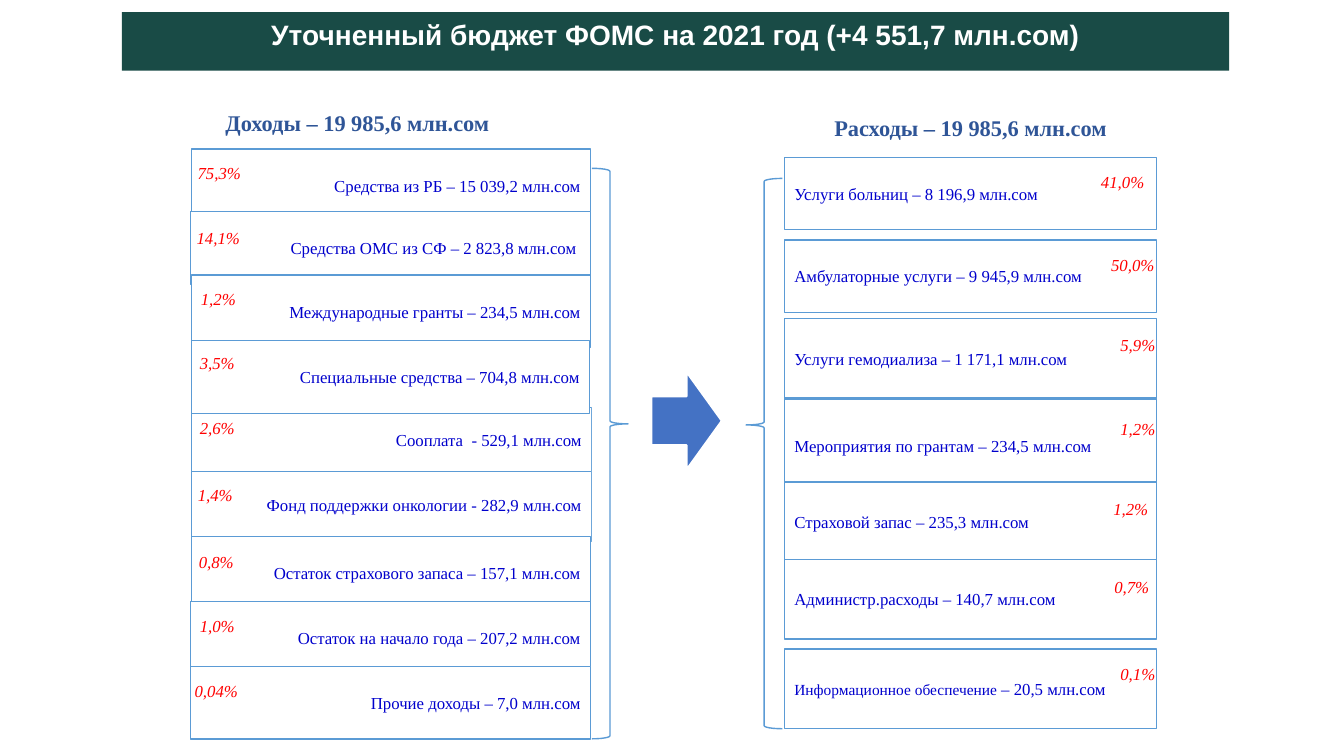
import pptx
import pptx.util
import pptx.dml.color
import pptx.enum.shapes
import pptx.enum.text

PX = 9144  # 100 px to the inch
KIND = pptx.enum.shapes.MSO_SHAPE
ALIGN = pptx.enum.text.PP_ALIGN
ANCHOR = pptx.enum.text.MSO_ANCHOR
SERIF = "Times New Roman"
EDGE, INK, RED, WHITE = "5B9BD5", "0000CC", "FF0000", "FFFFFF"

# Rows: left, top, width, height, label, share, share left, share top
# Positions are relative to the panel
INCOME = [
    (1, 45, 396, 72, "Средства из РБ – 15 039,2 млн.сом", "75,3%", -4, 54),
    (0, 107, 397, 72, "Средства ОМС из СФ – 2 823,8 млн.сом ", "14,1%", -5, 118),
    (1, 170, 396, 72, "Международные гранты – 234,5 млн.сом", "1,2%", -5, 179),
    (1, 362, 397, 72, "Фонд поддержки онкологии - 282,9 млн.сом", "1,4%", -8, 373),
    (1, 301, 397, 64, "Сооплата  - 529,1 млн.сом", "2,6%", -6, 307),
    (1, 235, 395, 72, "Специальные средства – 704,8 млн.сом", "3,5%", -6, 242),
    (1, 429, 396, 72, "Остаток страхового запаса – 157,1 млн.сом", "0,8%", -7, 439),
    (0, 494, 397, 72, "Остаток на начало года – 207,2 млн.сом", "1,0%", -6, 503),
    (0, 558, 397, 72, "Прочие доходы – 7,0 млн.сом", "0,04%", -7, 567),
]
SPEND = [
    (0, 48, 369, 72, "Услуги больниц – 8 196,9 млн.сом", "41,0%", 303, 57),
    (0, 130, 369, 72, "Амбулаторные услуги – 9 945,9 млн.сом", "50,0%", 313, 140),
    (0, 208, 369, 79, "Услуги гемодиализа – 1 171,1 млн.сом", "5,9%", 318, 219),
    (0, 288, 369, 92, "Мероприятия по грантам – 234,5 млн.сом", "1,2%", 318, 303),
    (0, 370, 369, 79, "Страховой запас – 235,3 млн.сом", "1,2%", 311, 382),
    (0, 447, 369, 79, "Администр.расходы – 140,7 млн.сом", "0,7%", 312, 459),
    (0, 536, 369, 79, [("Информационное обеспечение ", 11), ("– 20,5 млн.сом", 12)],
     "0,1%", 318, 546),
]


def color(code):
    return pptx.dml.color.RGBColor.from_string(code)


def scale(box):
    return [pptx.util.Emu(n * PX) for n in box]


def write(shape, runs, hue, align, anchor=ANCHOR.TOP, face=SERIF, bold=False, slant=False):
    frame = shape.text_frame
    frame.word_wrap = True
    frame.vertical_anchor = anchor
    para = frame.paragraphs[0]
    para.alignment = align
    for text, size in runs:
        run = para.add_run()
        run.text = text
        font = run.font
        font.name, font.size = face, pptx.util.Pt(size)
        font.bold, font.italic = bold, slant
        font.color.rgb = color(hue)
    return para


def draw(slide, kind, box, fill=WHITE, line=EDGE, width=1):
    shape = slide.shapes.add_shape(kind, *scale(box))
    shape.shadow.inherit = False
    shape.fill.solid()
    shape.fill.fore_color.rgb = color(fill)
    shape.line.color.rgb = color(line)
    shape.line.width = pptx.util.Pt(width)
    return shape


def note(slide, box, text, size, hue, **style):
    shape = slide.shapes.add_textbox(*scale(box))
    write(shape, [(text, size)], hue, ALIGN.CENTER, **style)


def banner(slide, box, text):
    title = slide.shapes.title
    title.left, title.top, title.width, title.height = scale(box)
    title.fill.solid()
    title.fill.fore_color.rgb = color("194B46")
    title.text_frame.auto_size = pptx.enum.text.MSO_AUTO_SIZE.NONE
    para = write(title, [(text, 20)], WHITE, ALIGN.CENTER, face="Arial", bold=True)
    para.space_before = para.space_after = pptx.util.Pt(12)


def brace(slide, box, flip):
    shape = draw(slide, KIND.RIGHT_BRACE, box)
    shape.adjustments[0] = 0.083
    shape.adjustments[1] = 0.448
    if flip:
        shape.element.spPr.xfrm.set("flipH", "1")


def panel(slide, box, head, shift, rows, align, flip):
    left, top, width, height = box
    note(slide, (left + shift, top, 347, 37), head, 16, "2F5597", bold=True)
    # Budget lines
    for x, y, w, h, label, *rest in rows:
        bar = draw(slide, KIND.RECTANGLE, (left + x, top + y, w, h))
        runs = [(label, 12)] if isinstance(label, str) else label
        write(bar, runs, INK, align, ANCHOR.MIDDLE)
    # Shares, above all lines
    for *rest, share, x, y in rows:
        note(slide, (left + x, top + y, 65, 30), share, 12, RED, slant=True)
    # Brace on the inner side
    side = left - 38 if flip else left + width + 1
    drop = 69 if flip else 64
    brace(slide, (side, top + drop, 36, height - drop), flip)


def main():
    deck = pptx.Presentation()
    deck.slide_width, deck.slide_height = scale((1333, 750))
    slide = deck.slides.add_slide(deck.slide_layouts[5])
    banner(slide, (121, 12, 1098, 58),
           "Уточненный бюджет ФОМС на 2021 год (+4 551,7 млн.сом)")
    panel(slide, (189, 103, 397, 630), "Доходы – 19 985,6 млн.сом", -8,
          INCOME, ALIGN.RIGHT, False)
    panel(slide, (778, 108, 369, 615), "Расходы – 19 985,6 млн.сом", 11,
          SPEND, ALIGN.LEFT, True)
    draw(slide, KIND.RIGHT_ARROW, (646, 369, 70, 97), "4472C4", WHITE, 1.5)
    deck.save("out.pptx")


if __name__ == "__main__":
    main()
